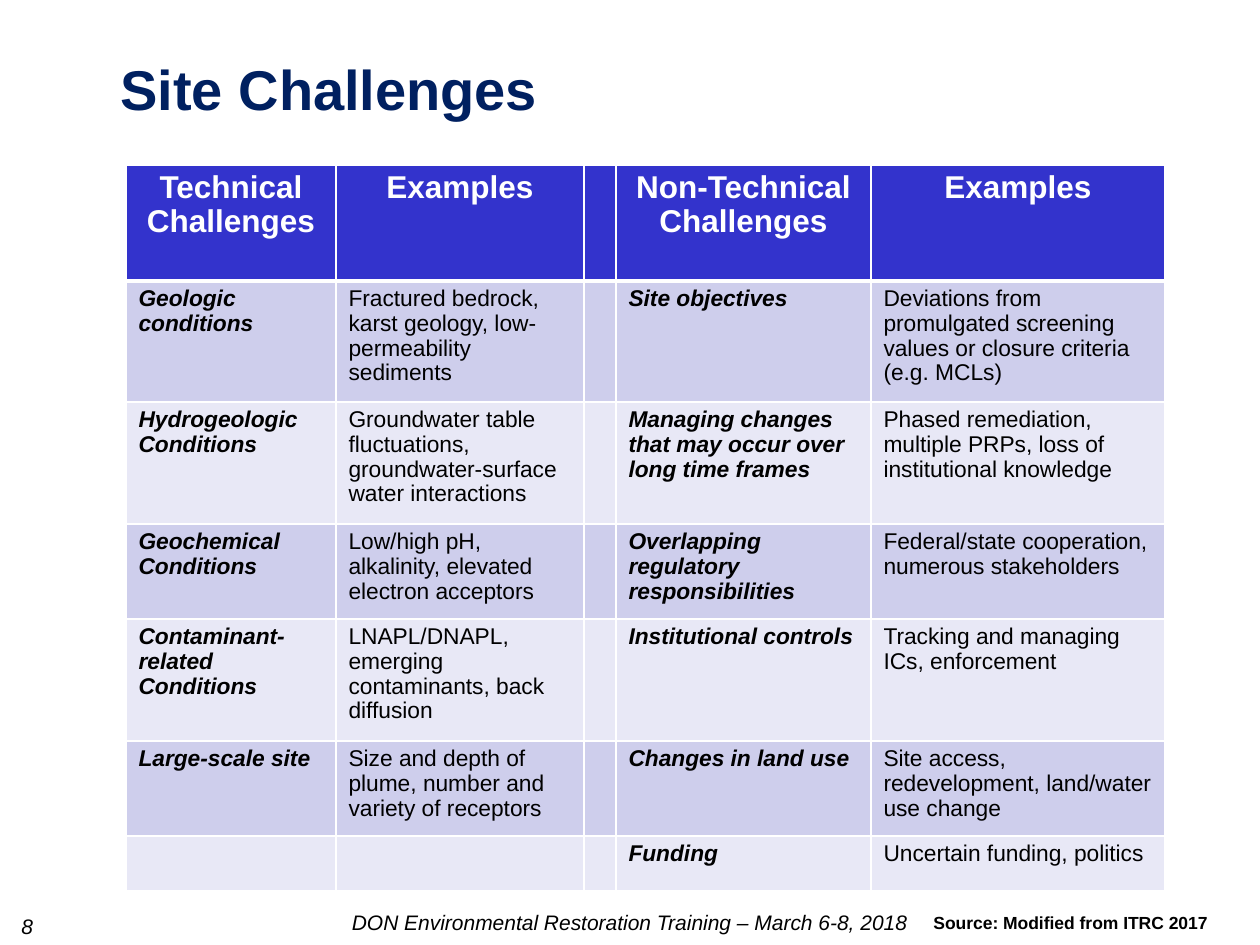
from dataclasses import dataclass

from lxml import etree
from pptx import Presentation
from pptx.dml.color import RGBColor
from pptx.enum.text import PP_ALIGN
from pptx.oxml.ns import qn
from pptx.util import Emu, Pt

LEFT, CENTER = PP_ALIGN.LEFT, PP_ALIGN.CENTER
EMU_PER_PX = 914400 // 126


@dataclass(frozen=True)
class Theme:
    """Colours, font and type sizes of the slide."""
    font: str = "Arial"
    ink: str = "000000"
    title: str = "002060"
    white: str = "FFFFFF"
    header: str = "3333CC"
    bands: tuple = ("CECEEC", "E8E8F6")
    title_size: int = 32
    header_size: int = 18
    body_size: int = 13
    footer_size: int = 12
    source_size: int = 10
    line_spacing: float = 0.97
    grid_width: int = 1
    header_rule: int = 3


THEME = Theme()

HEADINGS = ("Technical Challenges", "Examples", "", "Non-Technical Challenges", "Examples")
CHALLENGES = (
    ("Geologic conditions",
     "Fractured bedrock, karst geology, low-permeability sediments", "",
     "Site objectives",
     "Deviations from promulgated screening values or closure criteria (e.g. MCLs)"),
    ("Hydrogeologic Conditions",
     "Groundwater table fluctuations, groundwater-surface water interactions", "",
     "Managing changes that may occur over long time frames",
     "Phased remediation, multiple PRPs, loss of institutional knowledge"),
    ("Geochemical Conditions",
     "Low/high pH, alkalinity, elevated electron acceptors", "",
     "Overlapping regulatory responsibilities",
     "Federal/state cooperation, numerous stakeholders"),
    ("Contaminant-related Conditions",
     "LNAPL/DNAPL, emerging contaminants, back diffusion", "",
     "Institutional controls",
     "Tracking and managing ICs, enforcement"),
    ("Large-scale site",
     "Size and depth of plume, number and variety of receptors", "",
     "Changes in land use",
     "Site access, redevelopment, land/water use change"),
    ("", "", "", "Funding", "Uncertain funding, politics"),
)
CHALLENGE_COLUMNS = (0, 3)
COLUMN_WIDTHS = (210, 248, 32, 255, 294)
ROW_HEIGHTS = (116, 121, 122, 95, 122, 95, 55)


def px(length):
    """Turn whole px into EMU."""
    return Emu(length * EMU_PER_PX)


def add_run(paragraph, text, size, color, bold=False, italic=False):
    """Append one styled run to a paragraph."""
    run = paragraph.add_run()
    run.text = text
    font = run.font
    font.name, font.size = THEME.font, Pt(size)
    font.bold, font.italic = bold, italic
    font.color.rgb = RGBColor.from_string(color)


def add_label(slide, box, text, size, color=THEME.ink, align=LEFT, wrap=True, **style):
    """Place a one-line text box."""
    frame = slide.shapes.add_textbox(*map(px, box)).text_frame
    frame.word_wrap = wrap
    paragraph = frame.paragraphs[0]
    paragraph.alignment = align
    add_run(paragraph, text, size, color, **style)


def set_borders(cell, top, bottom):
    """Draw white rules round a cell, with the given top and bottom widths."""
    properties = cell._tc.get_or_add_tcPr()
    widths = {"a:lnL": THEME.grid_width, "a:lnR": THEME.grid_width,
              "a:lnT": top, "a:lnB": bottom}
    for side, width in widths.items():
        rule = etree.SubElement(properties, qn(side), w=str(Pt(width)))
        fill = etree.SubElement(rule, qn("a:solidFill"))
        etree.SubElement(fill, qn("a:srgbClr"), val=THEME.white)


def fill_cell(cell, text, background, align, top, bottom, **style):
    """Give a cell its borders, background and text."""
    set_borders(cell, top, bottom)
    cell.fill.solid()
    cell.fill.fore_color.rgb = RGBColor.from_string(background)
    if text:
        paragraph = cell.text_frame.paragraphs[0]
        paragraph.alignment = align
        paragraph.line_spacing = THEME.line_spacing
        add_run(paragraph, text, **style)


def add_challenge_table(slide, left, top):
    """Build the table of technical and non-technical challenges."""
    table = slide.shapes.add_table(
        len(ROW_HEIGHTS), len(COLUMN_WIDTHS), px(left), px(top),
        px(sum(COLUMN_WIDTHS)), px(sum(ROW_HEIGHTS))).table
    table.horz_banding = False
    for column, width in zip(table.columns, COLUMN_WIDTHS):
        column.width = px(width)
    for row, height in zip(table.rows, ROW_HEIGHTS):
        row.height = px(height)

    for column, heading in enumerate(HEADINGS):
        fill_cell(table.cell(0, column), heading, THEME.header, CENTER,
                  THEME.grid_width, THEME.header_rule,
                  size=THEME.header_size, color=THEME.white, bold=True)
    for row, entries in enumerate(CHALLENGES, start=1):
        band = THEME.bands[(row - 1) % len(THEME.bands)]
        rule_above = THEME.header_rule if row == 1 else THEME.grid_width
        for column, entry in enumerate(entries):
            emphasis = column in CHALLENGE_COLUMNS
            fill_cell(table.cell(row, column), entry, band, LEFT,
                      rule_above, THEME.grid_width, size=THEME.body_size,
                      color=THEME.ink, bold=emphasis, italic=emphasis)


def main():
    """Build and save the slide."""
    deck = Presentation()
    deck.slide_width, deck.slide_height = px(1260), px(945)
    slide = deck.slides.add_slide(deck.slide_layouts[6])
    add_label(slide, (9, 907, 135, 43), "8", THEME.footer_size, italic=True)
    add_label(slide, (273, 903, 714, 38),
              "DON Environmental Restoration Training – March 6-8, 2018",
              THEME.footer_size, align=CENTER, italic=True)
    add_label(slide, (108, 48, 446, 81), "Site Challenges",
              THEME.title_size, THEME.title, wrap=False, bold=True)
    add_label(slide, (921, 906, 334, 34), "Source: Modified from ITRC 2017",
              THEME.source_size, bold=True)
    add_challenge_table(slide, 126, 165)
    deck.save("out.pptx")


if __name__ == "__main__":
    main()
